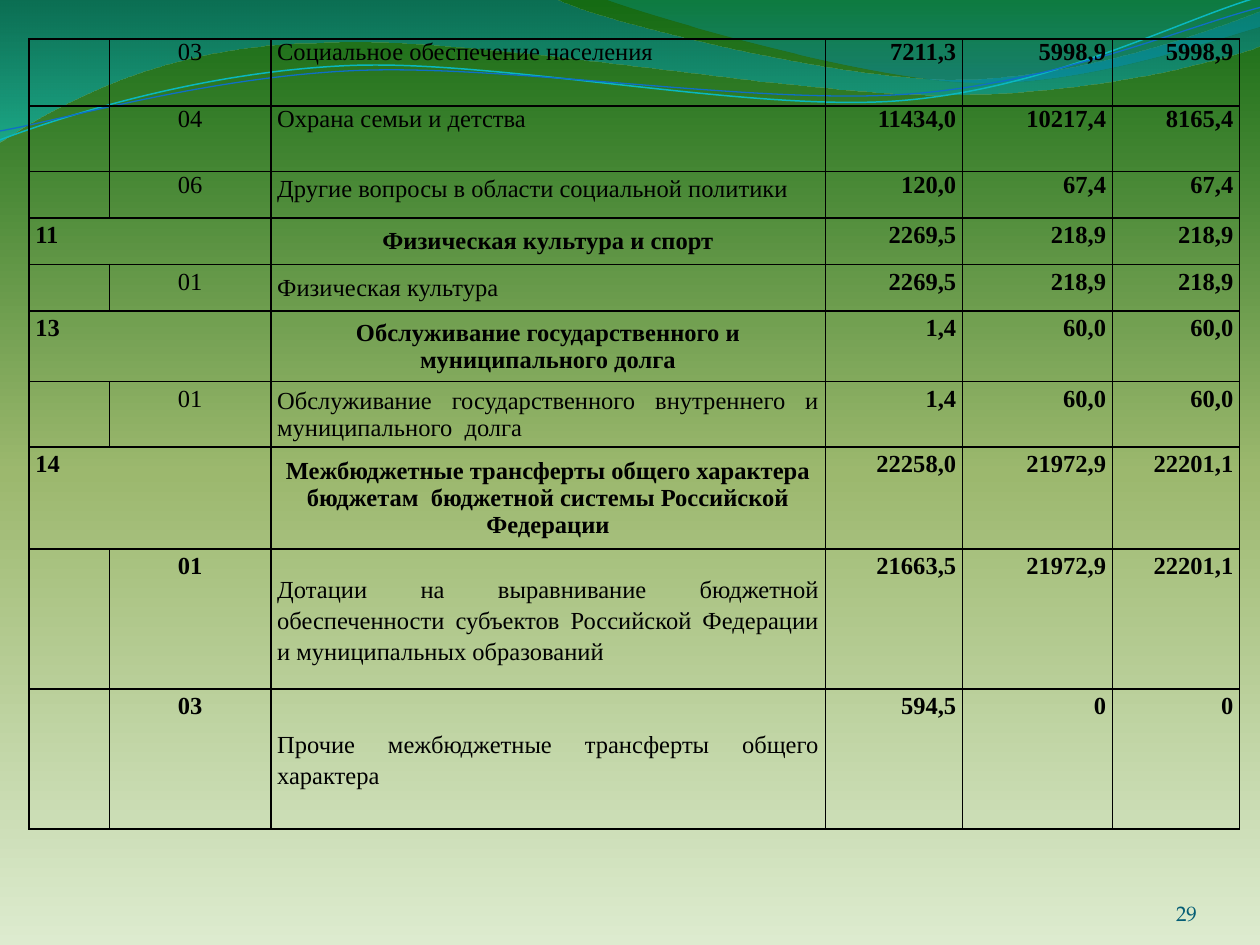
"""Build a budget table slide on a green background with waves."""
import math
import pptx
import pptx.util
import pptx.dml.color
import pptx.enum.text
import pptx.oxml.ns
from lxml import etree
from pptx.util import Inches

HUES = {
    "pale": "DDEBCF", "moss": "9CB86E", "green": "156B13",
    "blue": "0074A1", "aqua": "00C6CF", "teal": "00A1A9", "sea": "008BBF",
    "cyan": "0AB8BF", "azure": "0F6FC6", "page": "045D75", "black": "000000",
}
ALIGN = pptx.enum.text.PP_ALIGN
MID = pptx.enum.text.MSO_ANCHOR.MIDDLE
COLS = [0.64, 1.28, 4.4, 1.09, 1.19, 1.01]
HIGH = [0.53, 0.52, 0.37, 0.37, 0.37, 0.56, 0.52, 0.81, 1.11, 1.11]
ROWS = [
    ("", "03", "Социальное обеспечение населения", "7211,3", "5998,9", "5998,9"),
    ("", "04", "Охрана семьи и детства", "11434,0", "10217,4", "8165,4"),
    ("", "06", "Другие вопросы в области социальной политики", "120,0", "67,4", "67,4"),
    ("11", "", "Физическая культура и спорт", "2269,5", "218,9", "218,9"),
    ("", "01", "Физическая культура", "2269,5", "218,9", "218,9"),
    ("13", "", "Обслуживание государственного и муниципального долга", "1,4", "60,0", "60,0"),
    ("", "01", "Обслуживание государственного внутреннего и муниципального  долга",
     "1,4", "60,0", "60,0"),
    ("14", "", "Межбюджетные трансферты общего характера бюджетам  бюджетной системы "
     "Российской Федерации", "22258,0", "21972,9", "22201,1"),
    ("", "01", "Дотации на выравнивание бюджетной обеспеченности субъектов "
     "Российской Федерации и муниципальных образований", "21663,5", "21972,9", "22201,1"),
    ("", "03", "Прочие межбюджетные трансферты общего характера", "594,5", "0", "0"),
]
LOOSE = (2, 8, 9)
TILT = 2.7
BANDS = [
    ([(0, -0.01), (4.4, -0.01), (4.76, 0.17, 6.64, 0.63, 7.58, 0.63),
      (8.53, 0.63, 9.58, 0.26, 10, 0.09), (10.01, 0.36),
      (9.83, 0.44, 8.7, 0.76, 7.46, 0.75), (6.22, 0.75, 3.82, 0.28, 2.57, 0.34),
      (1.29, 0.35, 0.46, 0.83, -0.01, 1.13)],
     [(0, "blue", 45), (100, "aqua", 55)]),
    ([(4.79, -0.01), (5.09, 0.11, 6.82, 0.62, 7.69, 0.65),
      (8.56, 0.69, 9.61, 0.32, 10, 0.21), (10, 0)],
     [(0, "teal", 30), (80, "sea", 45)]),
]
WAVES = [
    ([(0, 1.11), (0.48, 0.93, 1.58, 0.57, 2.77, 0.52),
      (3.95, 0.47, 5.93, 0.89, 7.13, 0.8), (8.33, 0.71, 9.38, 0.15, 9.98, -0.02)],
     (4.99, 0.58), "cyan", 0.85),
    ([(0, 1.04), (0.47, 0.96, 1.64, 0.61, 2.83, 0.56),
      (4.03, 0.51, 5.97, 0.83, 7.17, 0.75), (8.36, 0.67, 9.41, 0.21, 10, 0.06)],
     (5, 0.59), "azure", 0.75),
]


def rgb(hue):
    return pptx.dml.color.RGBColor.from_string(HUES[hue])


def node(root, tag, **attrs):
    return etree.SubElement(root, pptx.oxml.ns.qn(tag), attrs)


def shade(fill, root, stops, angle):
    fill.gradient()
    grad = root.find(".//" + pptx.oxml.ns.qn("a:gradFill"))
    for kid in list(grad):
        grad.remove(kid)
    group = node(grad, "a:gsLst")
    for pos, hue, alpha in stops:
        stop = node(group, "a:gs", pos=str(pos * 1000))
        tint = node(stop, "a:srgbClr", val=HUES[hue])
        if alpha < 100:
            node(tint, "a:alpha", val=str(alpha * 1000))
    node(grad, "a:lin", ang=str(angle * 60000), scaled="0")


def pairs(step):
    return list(zip(step[::2], step[1::2]))


def level(step, hub):
    cos, sin = math.cos(math.radians(TILT)), math.sin(math.radians(TILT))
    flat = []
    for x, y in pairs(step):
        dx, dy = x - hub[0], y - hub[1]
        flat += [hub[0] + dx * cos - dy * sin, hub[1] + dx * sin + dy * cos]
    return flat


def outline(slide, steps, close):
    spots = [(Inches(x), Inches(y)) for step in steps for x, y in pairs(step)]
    pen = slide.shapes.build_freeform(*spots[0])
    pen.add_line_segments(spots[1:], close=close)
    shape = pen.convert_to_shape()
    shape.shadow.inherit = False
    lines = iter(list(shape.element.iter(pptx.oxml.ns.qn("a:lnTo"))))
    for step in steps[1:]:
        first, *rest = [next(lines) for spot in pairs(step)]
        if rest:
            curve = etree.Element(pptx.oxml.ns.qn("a:cubicBezTo"))
            first.addprevious(curve)
            for line in (first, *rest):
                curve.append(line[0])
                line.getparent().remove(line)
    return shape


def band(slide, steps, stops):
    shape = outline(slide, steps, True)
    shade(shape.fill, shape.element, stops, 90)
    shape.line.fill.background()


def wave(slide, steps, hub, hue, width):
    shape = outline(slide, [level(step, hub) for step in steps], False)
    shape.rotation = 360 - TILT
    shape.fill.background()
    shape.line.color.rgb = rgb(hue)
    shape.line.width = pptx.util.Pt(width)


def write(frame, text, align=ALIGN.LEFT, size=14, bold=False, hue="black",
          face="Times New Roman", loose=False):
    para = frame.paragraphs[0]
    para.alignment = align
    if loose:
        para.line_spacing = 1.15
        para.space_after = pptx.util.Pt(10)
    run = para.add_run()
    run.text = text
    font = run.font
    font.size, font.bold, font.name = pptx.util.Pt(size), bold, face
    font.color.rgb = rgb(hue)


def border(cell):
    props = cell._tc.get_or_add_tcPr()
    for i, side in enumerate(("a:lnL", "a:lnR", "a:lnT", "a:lnB")):
        line = etree.Element(pptx.oxml.ns.qn(side), w="12700")
        node(node(line, "a:solidFill"), "a:srgbClr", val=HUES["black"])
        props.insert(i, line)


def style(r, c):
    head, late = bool(ROWS[r][0]), r > 2
    if c == 0:
        return dict(bold=True, loose=True)
    if c == 1:
        return dict(align=ALIGN.CENTER, bold=r > 7, loose=late)
    if c == 2:
        align = ALIGN.CENTER if head else ALIGN.JUSTIFY
        return dict(align=align, bold=head, loose=r in LOOSE)
    return dict(align=ALIGN.RIGHT, bold=True, loose=late)


def budget(slide):
    table = slide.shapes.add_table(
        len(ROWS), len(COLS), Inches(0.23), Inches(0.31),
        Inches(sum(COLS)), Inches(sum(HIGH))).table
    table.first_row = table.horz_banding = False
    for col, width in zip(table.columns, COLS):
        col.width = Inches(width)
    for r, texts in enumerate(ROWS):
        table.rows[r].height = Inches(HIGH[r])
        for c, text in enumerate(texts):
            cell = table.cell(r, c)
            cell.fill.background()
            border(cell)
            cell.margin_left = cell.margin_right = Inches(0.05)
            cell.margin_top = cell.margin_bottom = 0
            if text:
                write(cell.text_frame, text, **style(r, c))
            if c == 2 and r > 2:
                cell.vertical_anchor = MID
        if texts[0]:
            table.cell(r, 0).merge(table.cell(r, 1))


def number(slide):
    frame = slide.shapes.add_textbox(
        Inches(8.67), Inches(6.95), Inches(0.83), Inches(0.4)).text_frame
    frame.word_wrap = True
    frame.vertical_anchor = pptx.enum.text.MSO_ANCHOR.BOTTOM
    frame.margin_left = frame.margin_right = frame.margin_top = frame.margin_bottom = 0
    write(frame, "29", align=ALIGN.RIGHT, size=12, hue="page", face="TeX Gyre Pagella")


def main():
    deck = pptx.Presentation()
    deck.slide_width, deck.slide_height = Inches(10), Inches(7.5)
    slide = deck.slides.add_slide(deck.slide_layouts[6])
    shade(slide.background.fill, slide.element,
          [(0, "pale", 100), (50, "moss", 100), (100, "green", 100)], 270)
    for item in BANDS:
        band(slide, *item)
    for item in WAVES:
        wave(slide, *item)
    number(slide)
    budget(slide)
    deck.save("out.pptx")


if __name__ == "__main__":
    main()
